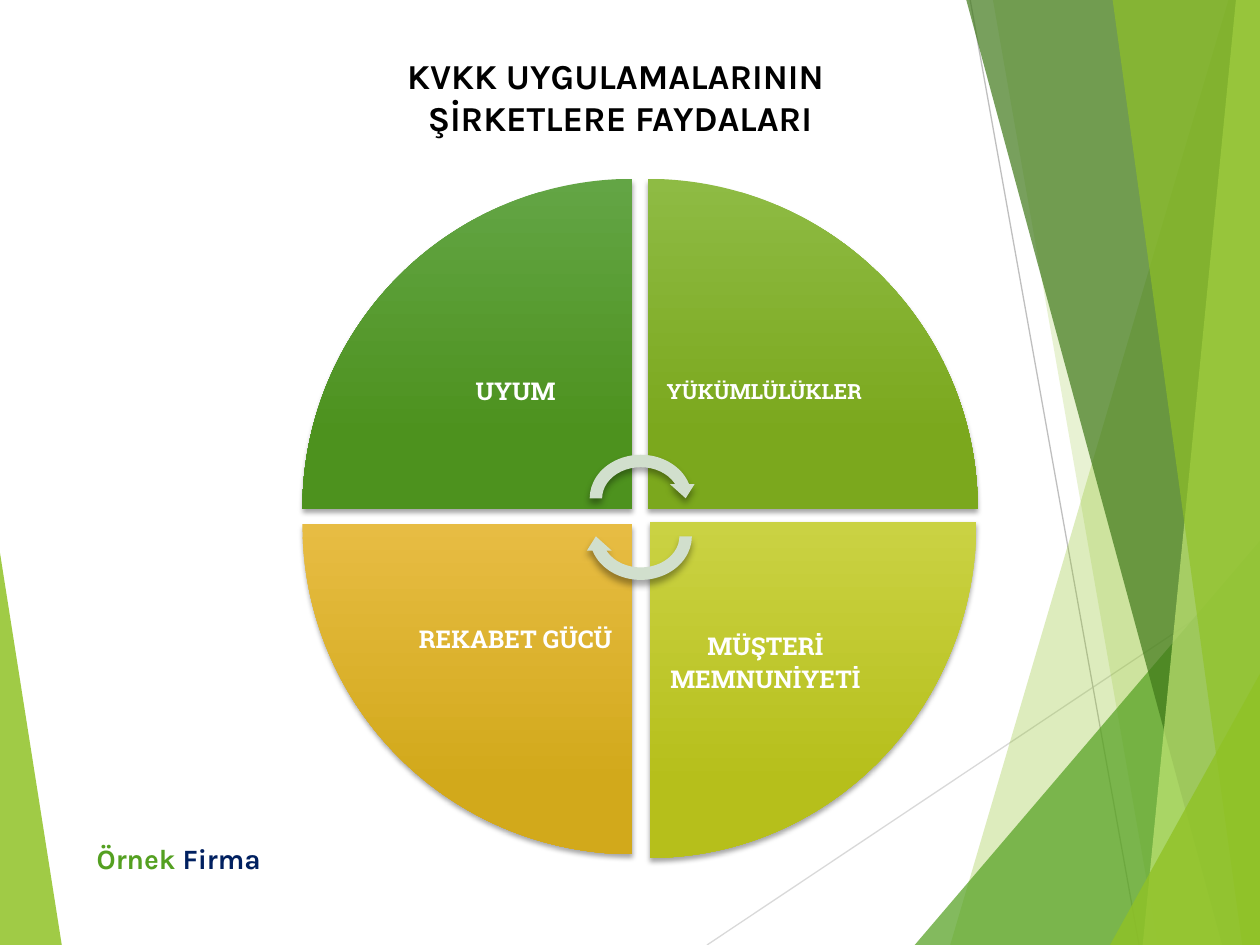
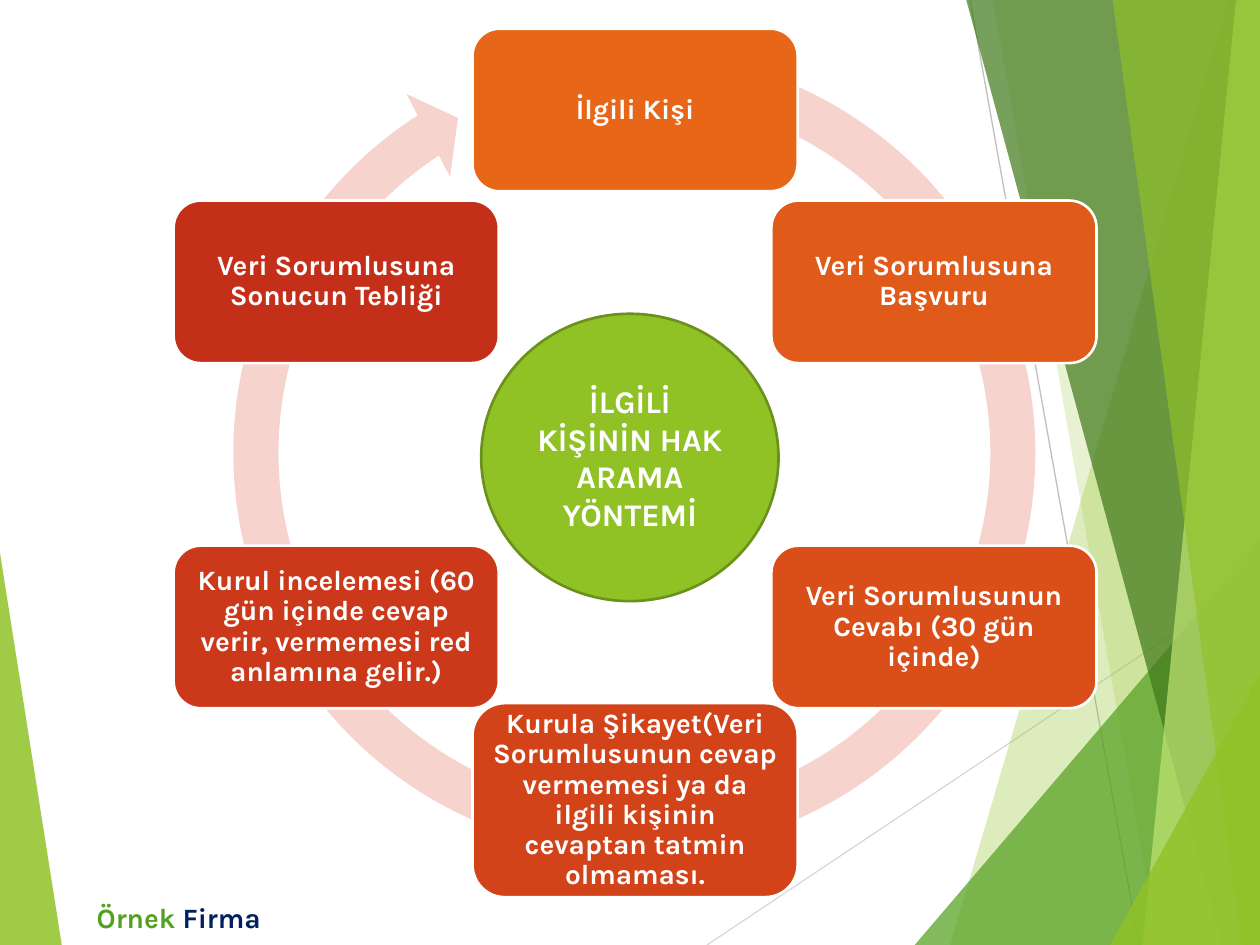
from dataclasses import dataclass
from lxml.etree import SubElement
from pptx import Presentation
from pptx.dml.color import RGBColor
from pptx.enum.shapes import MSO_CONNECTOR as Link, MSO_SHAPE as Kind
from pptx.enum.text import MSO_ANCHOR as Anchor, MSO_AUTO_SIZE as Fit, PP_ALIGN as Align
from pptx.oxml.ns import qn
from pptx.util import Pt


@dataclass(frozen=True)
class Theme:
    body: str = "Karla"
    slab: str = "Roboto Slab"
    lime: str = "90C226"
    green: str = "54A021"
    forest: str = "3F7819"
    pale: str = "C0E474"
    olive: str = "6B901C"
    navy: str = "002060"
    white: str = "FFFFFF"
    black: str = "000000"
    arrow: str = "D1DFCD"
    ring: str = "F6D3CC"
    title: int = 20
    hub: int = 18
    step: int = 16
    label: int = 14
    small: int = 12


T = Theme()
WIDE, HIGH = 720, 540

BRAND = (("Örnek", T.green), (" Firma", T.navy))
TITLE = ("KVKK UYGULAMALARININ ", "ŞİRKETLERE FAYDALARI")
HUB = "İLGİLİ KİŞİNİN HAK ARAMA YÖNTEMİ"

RAYS = [((404, 540), (720, 329), "D9D9D9"), ((554.4, 0), (650.9, 540), "BFBFBF")]
END = [(WIDE, HIGH), (WIDE, 0)]
BANDS = [
    (T.lime, 85, [(0, 316), (35.3, 540), (0, 540)]),
    (T.lime, 30, [(702, 0), (543, 540), *END]),
    (T.lime, 20, [(567.4, 0), (661.7, 540), *END]),
    (T.green, 72, [(522.7, 540), (720, 309), (720, 540)]),
    (T.forest, 70, [(552.2, 0), (698.4, 540), *END]),
    (T.pale, 70, [(706.3, 0), (653, 540), *END]),
    (T.lime, 65, [(635.8, 0), (709.9, 540), *END]),
    (T.lime, 80, [(634.3, 540), (720, 385), (720, 540)]),
]

WEDGES = [
    (("UYUM",), T.label, 8, ("63A545", "4D921E"), (172.8, 102.2, 188.6, 188.6)),
    (("YÜKÜMLÜLÜKLER",), T.small, 6.5, ("8EBB44", "7BA81D"), (370.1, 102.2, 188.6, 188.6)),
    (("MÜŞTERİ", "MEMNUNİYETİ"), T.label, 10, ("CAD243", "B6BF1B"), (371.5, 298, 186.5, 192.2)),
    (("REKABET GÜCÜ",), T.label, 8, ("E7BC43", "D2A91B"), (172.8, 299.5, 188.6, 188.6)),
]
SPINS = [(256.3, 0), (278, 180)]

COLS = [99.2 + 170.8 * i for i in range(3)]
ROWS = [16.4, 114.6, 311.8, 401.8]
STEPS = [
    ("İlgili Kişi", "E76618", 1, 0),
    ("Veri Sorumlusuna Başvuru", "E05A19", 2, 1),
    ("Veri Sorumlusunun Cevabı (30 gün içinde)", "D94E19", 2, 2),
    ("Kurula Şikayet(Veri Sorumlusunun cevap vermemesi ya da ilgili kişinin "
     "cevaptan tatmin olmaması.", "D24319", 1, 3),
    ("Kurul incelemesi (60 gün içinde cevap verir, vermemesi red anlamına gelir.)",
     "CB391A", 0, 2),
    ("Veri Sorumlusuna Sonucun Tebliği", "C42F1A", 0, 1),
]
RING = [5.3, 312.6, 14220.7, 17131.4, 5.5]


def rgb(code):
    return RGBColor.from_string(code)


def pts(*nums):
    return [Pt(n) for n in nums]


def write(shape, *lines, size=T.step, font=T.body, color=T.white, align=Align.CENTER,
          anchor=Anchor.MIDDLE, inset=(7.2, 3.6, 7.2, 3.6), space=None, after=0):
    frame = shape.text_frame
    frame.word_wrap, frame.auto_size = True, Fit.NONE
    frame.vertical_anchor = anchor
    (frame.margin_left, frame.margin_top,
     frame.margin_right, frame.margin_bottom) = pts(*inset)
    for i, line in enumerate(lines):
        para = frame.add_paragraph() if i else frame.paragraphs[0]
        para.alignment, para.line_spacing = align, space
        para.space_before, para.space_after = pts(0, after)
        for text, tint in ([(line, color)] if isinstance(line, str) else line):
            run = para.add_run()
            run.text = text
            run.font.name, run.font.size, run.font.bold = font, Pt(size), True
            run.font.color.rgb = rgb(tint)


def style(shape, fill=None, line=None):
    shape.shadow.inherit = False
    if fill:
        shape.fill.solid()
        shape.fill.fore_color.rgb = rgb(fill)
    if line:
        shape.line.color.rgb = rgb(line)
        shape.line.width = Pt(1.5)
    else:
        shape.line.fill.background()


def draw(slide, kind, box, fill=None, line=None):
    shape = slide.shapes.add_shape(kind, *pts(*box))
    style(shape, fill, line)
    return shape


def shade(shape, blur, dist):
    effects = shape.element.spPr.find(qn("a:effectLst"))
    cast = SubElement(effects, qn("a:outerShdw"), blurRad=str(Pt(blur)),
                      dist=str(Pt(dist)), dir="5400000", rotWithShape="0")
    tint = SubElement(cast, qn("a:srgbClr"), val=T.black)
    SubElement(tint, qn("a:alpha"), val="35000")


def blend(shape, tints):
    shape.fill.gradient()
    shape.fill.gradient_angle = 270
    for stop, tint, place in zip(shape.fill.gradient_stops, tints, (0, 0.78)):
        stop.color.rgb, stop.position = rgb(tint), place
    shape.element.spPr.find(qn("a:gradFill")).set("rotWithShape", "0")


def add_band(slide, fill, alpha, points):
    start, *rest = [pts(*point) for point in points]
    path = slide.shapes.build_freeform(*start, scale=1.0)
    path.add_line_segments(rest, close=True)
    band = path.convert_to_shape()
    style(band, fill)
    tint = band.element.spPr.find(qn("a:solidFill"))[0]
    SubElement(tint, qn("a:alpha"), val=str(alpha * 1000))
    return band


def add_ray(slide, start, end, color):
    ray = slide.shapes.add_connector(Link.STRAIGHT, *pts(*start, *end))
    ray.line.color.rgb, ray.line.width = rgb(color), Pt(0.75)
    SubElement(ray.element.spPr, qn("a:effectLst"))
    return ray


def fill_master(deck, slide):
    first, *others = BANDS
    parts = [add_band(slide, *first)]
    parts += [add_ray(slide, *ray) for ray in RAYS]
    parts += [add_band(slide, *band) for band in others]
    tree = deck.slide_master.shapes.element
    for num, part in enumerate(parts, 100):
        part.element[0][0].set("id", str(num))
        tree.append(part.element)


def add_brand(slide, top, high):
    box = slide.shapes.add_textbox(*pts(48.2, top, 364, high))
    write(box, BRAND, align=Align.LEFT)


def add_gains(slide):
    title = slide.shapes.title
    title.left, title.top, title.width, title.height = pts(139, 27.4, 430.6, 55.4)
    write(title, *TITLE, size=T.title, color=T.black, anchor=Anchor.TOP)
    add_brand(slide, 476, 28.8)
    for i, (lines, size, pad, tints, box) in enumerate(WEDGES):
        wedge = draw(slide, Kind.PIE_WEDGE, box)
        wedge.rotation = 90 * i
        blend(wedge, tints)
        shade(wedge, 3, 2)
        left, top, wide, high = box
        part = 0.707
        x = left + wide * (1 - part) * (i in (0, 3))
        y = top + high * (1 - part) * (i < 2)
        label = slide.shapes.add_textbox(*pts(x, y, wide * part, high * part))
        drop = 27 * (len(lines) - 1)
        write(label, *lines, size=size, font=T.slab, space=0.9, after=3.4,
              inset=(pad, pad + drop, pad, pad))
    for top, turn in SPINS:
        arrow = draw(slide, Kind.CIRCULAR_ARROW, (333.4, top, 65.5, 56.9), T.arrow)
        arrow.rotation = turn
        shade(arrow, 4, 3)


def add_cycle(slide):
    ring = draw(slide, Kind.CIRCULAR_ARROW, (119.5, 15.8, 486, 486), T.ring)
    for i, value in enumerate(RING):
        ring.adjustments[i] = value / 100
    for text, fill, col, row in STEPS:
        high = 110.9 if row == 3 else 92.9
        card = draw(slide, Kind.ROUNDED_RECTANGLE, (COLS[col], ROWS[row], 185.8, high),
                    fill, T.white)
        write(card, text, space=0.9, inset=(5, 5, 5, 5))
    add_brand(slide, 508.3, 31.7)
    hub = draw(slide, Kind.OVAL, (275, 179.3, 169.9, 164.2), T.lime, T.olive)
    write(hub, HUB, size=T.hub)


def main():
    deck = Presentation()
    deck.slide_width, deck.slide_height = pts(WIDE, HIGH)
    gains = deck.slides.add_slide(deck.slide_layouts[5])
    cycle = deck.slides.add_slide(deck.slide_layouts[6])
    fill_master(deck, gains)
    add_gains(gains)
    add_cycle(cycle)
    deck.save("out.pptx")


if __name__ == "__main__":
    main()
